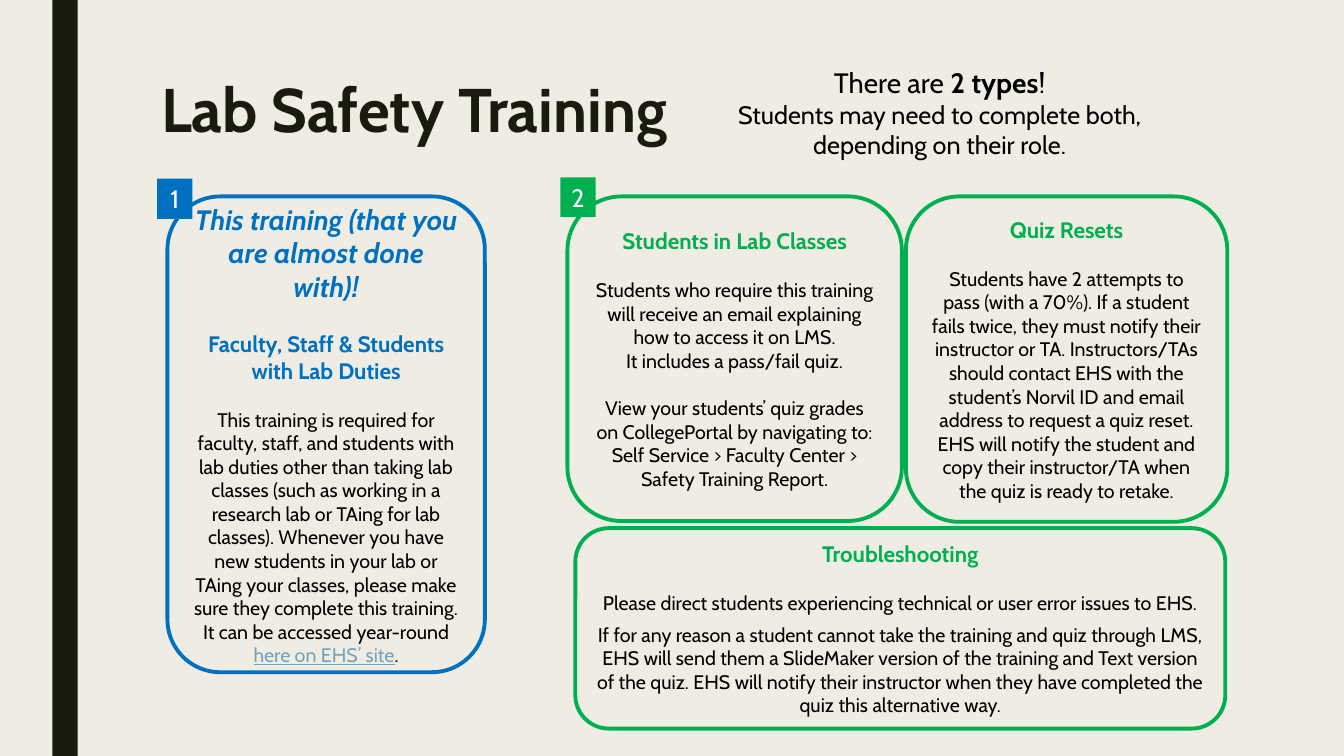
from dataclasses import dataclass
from typing import NamedTuple

from pptx import Presentation
from pptx import util as u
from pptx.dml.color import RGBColor
from pptx.enum import shapes, text
from pptx.shapes.autoshape import Shape
from pptx.slide import Slide
from pptx.text.text import TextFrame


@dataclass(frozen=True)
class Theme:
    font: str = "Cabin"
    background: str = "EFEDE3"
    dark: str = "191B0E"
    black: str = "000000"
    white: str = "FFFFFF"
    blue: str = "0070C0"
    green: str = "00B050"
    link: str = "77A2BB"
    title: float = 44
    lead: float = 20
    subhead: float = 18
    heading: float = 16
    body: float = 14
    outline: float = 2.75


THEME = Theme()


class Box(NamedTuple):
    left: float
    top: float
    width: float
    height: float

    def lengths(self) -> list[u.Length]:
        return [u.Cm(value) for value in self]


class Piece(NamedTuple):
    words: str
    size: float = THEME.body
    color: str = THEME.black
    format: dict[str, bool] = {}


class Line(NamedTuple):
    pieces: list[Piece]
    before: float = 0


class Card(NamedTuple):
    box: Box
    color: str
    lines: list[Line]


class Badge(NamedTuple):
    box: Box
    color: str
    number: str


def heading(words: str, color: str, before: float = 0) -> Line:
    return Line([Piece(words, THEME.heading, color, {"bold": True})], before)


def body(words: str, before: float = 0) -> Line:
    return Line([Piece(words)], before)


BODY_GAP = 17

CARDS = [
    Card(Box(4.22, 4.95, 8, 11.99), THEME.blue, [
        Line([Piece("This training (that you are almost done with)!", THEME.lead,
                    THEME.blue, {"bold": True, "italic": True})]),
        heading("Faculty, Staff & Students with Lab Duties", THEME.blue, 19.5),
        Line([
            Piece("This training is required for faculty, staff, and students with lab "
                  "duties other than taking lab classes (such as working in a research "
                  "lab or TAing for lab classes). Whenever you have new students in your "
                  "lab or TAing your classes, please make sure they complete this "
                  "training. It can be accessed year-round "),
            Piece("here on EHS’ site", color=THEME.link, format={"underline": True}),
            Piece("."),
        ], BODY_GAP),
    ]),
    Card(Box(14.3, 4.95, 8.43, 8.18), THEME.green, [
        heading("Students in Lab Classes", THEME.green),
        body("Students who require this training will receive an email explaining "
             "how to access it on LMS.", BODY_GAP),
        body("It includes a pass/fail quiz."),
        body("View your students’ quiz grades on CollegePortal by navigating to:",
             BODY_GAP),
        body("Self Service > Faculty Center > Safety Training Report."),
    ]),
    Card(Box(22.83, 4.95, 8.1, 8.2), THEME.green, [
        heading("Quiz Resets", THEME.green),
        body("Students have 2 attempts to pass (with a 70%). If a student fails twice, "
             "they must notify their instructor or TA. Instructors/TAs should contact "
             "EHS with the student’s Norvil ID and email address to request a quiz "
             "reset. EHS will notify the student and copy their instructor/TA when the "
             "quiz is ready to retake.", BODY_GAP),
    ]),
    Card(Box(14.5, 13.31, 16.38, 5.05), THEME.green, [
        heading("Troubleshooting", THEME.green),
        body("Please direct students experiencing technical or user error issues to "
             "EHS.", BODY_GAP),
        body("If for any reason a student cannot take the training and quiz through "
             "LMS, EHS will send them a SlideMaker version of the training and Text "
             "version of the quiz. EHS will notify their instructor when they have "
             "completed the quiz this alternative way.", 6),
    ]),
]

BADGES = [
    Badge(Box(3.96, 4.5, 0.89, 1.02), THEME.blue, "1"),
    Badge(Box(14.12, 4.47, 0.89, 1), THEME.green, "2"),
]

TITLE = Line([Piece("Lab Safety Training", THEME.title, THEME.dark, {"bold": True})])
INTRO = [
    Line([Piece("There are ", THEME.lead),
          Piece("2 types", THEME.lead, format={"bold": True}),
          Piece("!", THEME.lead)]),
    Line([Piece("Students may need to complete both, depending on their role.",
                THEME.subhead)]),
]


def write(frame: TextFrame, lines: list[Line], align: text.PP_ALIGN,
          anchor: text.MSO_ANCHOR, spacing: float = 1) -> None:
    frame.word_wrap = True
    frame.vertical_anchor = anchor
    for index, line in enumerate(lines):
        paragraph = frame.add_paragraph() if index else frame.paragraphs[0]
        layout = {"alignment": align, "line_spacing": spacing,
                  "space_before": u.Pt(line.before), "space_after": u.Pt(0)}
        for name, value in layout.items():
            setattr(paragraph, name, value)
        for piece in line.pieces:
            run = paragraph.add_run()
            run.text = piece.words
            run.font.color.rgb = RGBColor.from_string(piece.color)
            values = {"name": THEME.font, "size": u.Pt(piece.size), **piece.format}
            for name, value in values.items():
                setattr(run.font, name, value)


def add_text(slide: Slide, box: Box, lines: list[Line], align: text.PP_ALIGN,
             spacing: float = 1) -> None:
    frame = slide.shapes.add_textbox(*box.lengths()).text_frame
    write(frame, lines, align, text.MSO_ANCHOR.TOP, spacing)


def add_block(slide: Slide, box: Box, color: str) -> Shape:
    """Add a filled rectangle without an outline."""
    block = slide.shapes.add_shape(shapes.MSO_SHAPE.RECTANGLE, *box.lengths())
    block.shadow.inherit = False
    block.fill.solid()
    block.fill.fore_color.rgb = RGBColor.from_string(color)
    block.line.fill.background()
    return block


def add_card(slide: Slide, card: Card) -> None:
    shape = slide.shapes.add_shape(shapes.MSO_SHAPE.ROUNDED_RECTANGLE,
                                   *card.box.lengths())
    shape.shadow.inherit = False
    shape.fill.background()
    shape.line.color.rgb = RGBColor.from_string(card.color)
    shape.line.width = u.Pt(THEME.outline)
    write(shape.text_frame, card.lines, text.PP_ALIGN.CENTER, text.MSO_ANCHOR.MIDDLE)


def add_badge(slide: Slide, badge: Badge) -> None:
    block = add_block(slide, badge.box, badge.color)
    number = Line([Piece(badge.number, THEME.subhead, THEME.white)])
    write(block.text_frame, [number], text.PP_ALIGN.CENTER, text.MSO_ANCHOR.MIDDLE)


def main() -> None:
    presentation = Presentation()
    presentation.slide_width = u.Cm(33.87)
    presentation.slide_height = u.Cm(19.05)
    slide = presentation.slides.add_slide(presentation.slide_layouts[6])
    slide.background.fill.solid()
    slide.background.fill.fore_color.rgb = RGBColor.from_string(THEME.background)

    add_block(slide, Box(1.32, 0, 0.64, 19.05), THEME.dark)
    add_text(slide, Box(3.81, 1.9, 26.67, 4.11), [TITLE], text.PP_ALIGN.LEFT, 0.89)
    add_text(slide, Box(17.75, 1.52, 11.86, 2.64), INTRO, text.PP_ALIGN.CENTER)
    for card in CARDS:
        add_card(slide, card)
    for badge in BADGES:
        add_badge(slide, badge)
    presentation.save("out.pptx")


if __name__ == "__main__":
    main()
